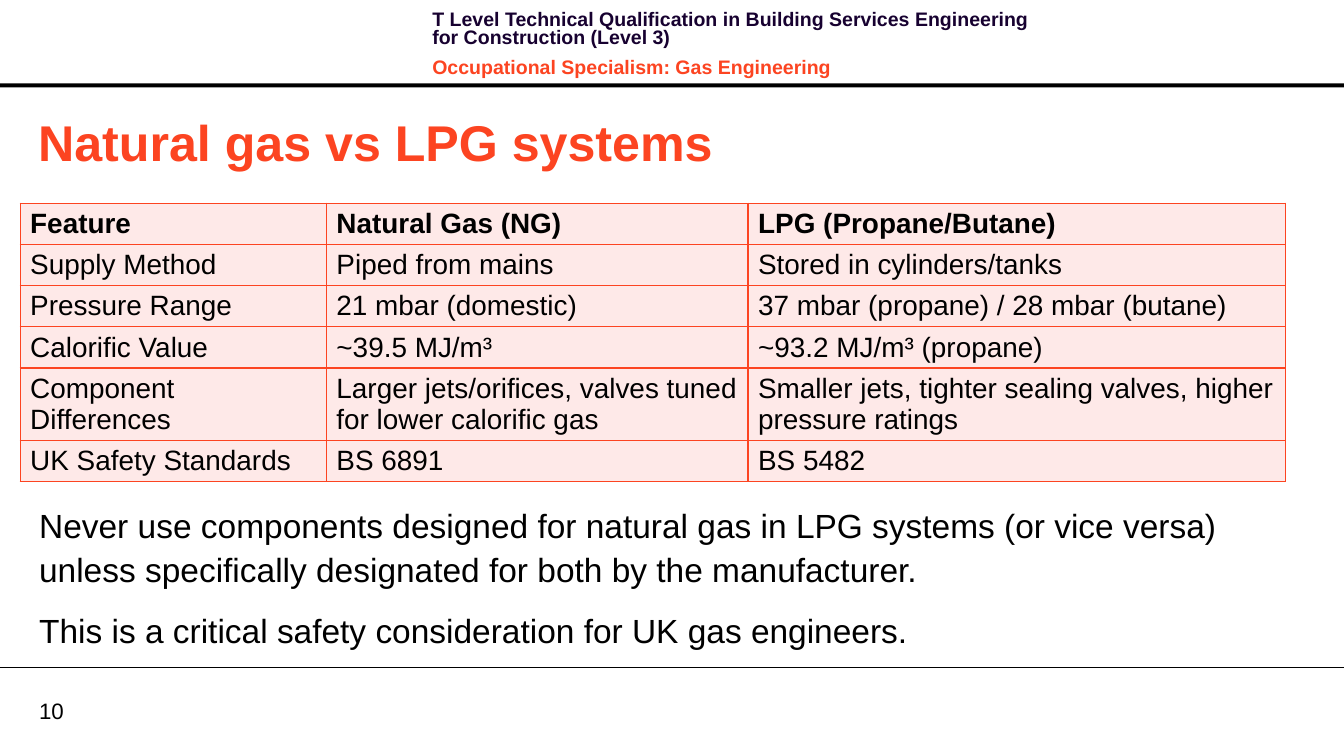
from lxml import etree
from pptx import Presentation
from pptx.dml.color import RGBColor
from pptx.enum.shapes import MSO_CONNECTOR, MSO_SHAPE
from pptx.enum.text import MSO_ANCHOR, MSO_AUTO_SIZE, PP_ALIGN
from pptx.oxml.ns import qn
from pptx.util import Cm, Pt

MIDDLE, TOP = MSO_ANCHOR.MIDDLE, MSO_ANCHOR.TOP
LEFT = PP_ALIGN.LEFT
NO_AUTOSIZE = MSO_AUTO_SIZE.NONE
RECTANGLE = MSO_SHAPE.RECTANGLE
STRAIGHT = MSO_CONNECTOR.STRAIGHT

COLOURS = {"black": "000000", "navy": "170130", "orange": "FC4421", "blush": "FEE9E8"}

TITLE = "Natural gas vs LPG systems"
HEADER = [
    ("T Level Technical Qualification in Building Services Engineering for Construction (Level 3)", "navy"),
    ("Occupational Specialism: Gas Engineering", "orange"),
]
COMPARISON = [
    ("Feature", "Natural Gas (NG)", "LPG (Propane/Butane)"),
    ("Supply Method", "Piped from mains", "Stored in cylinders/tanks"),
    ("Pressure Range", "21 mbar (domestic)", "37 mbar (propane) / 28 mbar (butane)"),
    ("Calorific Value", "~39.5 MJ/m³", "~93.2 MJ/m³ (propane)"),
    ("Component Differences", "Larger jets/orifices, valves tuned for lower calorific gas",
     "Smaller jets, tighter sealing valves, higher pressure ratings"),
    ("UK Safety Standards", "BS 6891", "BS 5482"),
]
WARNINGS = [
    "Never use components designed for natural gas in LPG systems (or vice versa) "
    "unless specifically designated for both by the manufacturer.",
    "This is a critical safety consideration for UK gas engineers.",
]
PAGE_NUMBER = "10"

PAGE_WIDTH, PAGE_HEIGHT = Cm(34.01), Cm(19)
COLUMN_WIDTHS = [Cm(7.75), Cm(10.67), Cm(13.59)]
ROW_HEIGHT, TALL_ROW_HEIGHT = Cm(1.04), Cm(1.83)
TALL_ROW = 4


def colour(name):
    return RGBColor.from_string(COLOURS[name])


def apply(target, values):
    for name, value in values.items():
        setattr(target, name, value)


def place(shape, left, top, width, height):
    apply(shape, {"left": Cm(left), "top": Cm(top), "width": Cm(width), "height": Cm(height)})


def write(frame, lines, size, bold=False, anchor=TOP, inset=None, spacing=None):
    apply(frame, {"word_wrap": True, "auto_size": NO_AUTOSIZE, "vertical_anchor": anchor})
    if inset is not None:
        apply(frame, {f"margin_{side}": inset for side in ("left", "top", "right", "bottom")})
    for index, (text, ink) in enumerate(lines):
        para = frame.paragraphs[0] if index == 0 else frame.add_paragraph()
        format_line(para, text, ink, size, bold)
        apply(para, spacing or {})
        if index == 0:
            para.space_before = Pt(0)


def format_line(para, text, ink, size, bold):
    para.alignment = LEFT
    span = para.add_run()
    span.text = text
    apply(span.font, {"name": "Arial", "size": Pt(size), "bold": bold})
    span.font.color.rgb = colour(ink)


def remove_bullet(para):
    properties = para._p.get_or_add_pPr()
    properties.set("marL", "0")
    properties.set("indent", "0")
    etree.SubElement(properties, qn("a:buNone"))


def add_borders(cell):
    properties = cell._tc.get_or_add_tcPr()
    for position, side in enumerate(("lnL", "lnR", "lnT", "lnB")):
        border = etree.Element(qn(f"a:{side}"), w=str(Pt(1)))
        fill = etree.SubElement(border, qn("a:solidFill"))
        etree.SubElement(fill, qn("a:srgbClr"), val=COLOURS["orange"])
        properties.insert(position, border)


def add_rules(page):
    bar = page.shapes.add_shape(RECTANGLE, 0, Cm(2.11), PAGE_WIDTH, Cm(0.1))
    bar.shadow.inherit = False
    bar.fill.solid()
    bar.fill.fore_color.rgb = colour("black")
    bar.line.fill.background()
    rule = page.shapes.add_connector(STRAIGHT, 0, Cm(16.89), PAGE_WIDTH, Cm(16.89))
    rule.line.width = Pt(0.75)
    rule.line.color.rgb = colour("black")
    etree.SubElement(rule._element.spPr, qn("a:effectLst"))


def add_comparison(page):
    heights = [TALL_ROW_HEIGHT if index == TALL_ROW else ROW_HEIGHT for index in range(len(COMPARISON))]
    table = page.shapes.add_table(len(heights), len(COLUMN_WIDTHS), Cm(0.51), Cm(5.14),
                                  sum(COLUMN_WIDTHS), sum(heights)).table
    for column, width in zip(table.columns, COLUMN_WIDTHS):
        column.width = width
    for index, (row, values) in enumerate(zip(table.rows, COMPARISON)):
        row.height = heights[index]
        for cell, value in zip(row.cells, values):
            cell.vertical_anchor = MIDDLE
            cell.fill.solid()
            cell.fill.fore_color.rgb = colour("blush")
            add_borders(cell)
            format_line(cell.text_frame.paragraphs[0], value, "black", 20, index == 0)


def main():
    deck = Presentation()
    apply(deck, {"slide_width": PAGE_WIDTH, "slide_height": PAGE_HEIGHT})
    page = deck.slides.add_slide(deck.slide_layouts[1])
    add_rules(page)

    header = page.shapes.add_textbox(0, 0, 0, 0)
    place(header, 10.69, 0.18, 16.18, 1.63)
    write(header.text_frame, HEADER, 14, bold=True,
          spacing={"line_spacing": Pt(13.1), "space_before": Pt(4), "space_after": Pt(4)})

    number = page.shapes.add_textbox(0, 0, 0, 0)
    place(number, 0.99, 17.63, 1.63, 0.69)
    write(number.text_frame, [(PAGE_NUMBER, "black")], 16, anchor=MIDDLE, inset=0)

    title, body = page.placeholders
    place(title, 0.71, 2.69, 32.31, 1.8)
    write(title.text_frame, [(TITLE, "orange")], 36, bold=True, anchor=MIDDLE)

    place(body, 0.99, 12.67, 31.5, 3.84)
    write(body.text_frame, [(text, "black") for text in WARNINGS], 24, inset=0,
          spacing={"line_spacing": 1.1, "space_before": Pt(0), "space_after": Pt(12)})
    for para in body.text_frame.paragraphs:
        remove_bullet(para)

    add_comparison(page)
    deck.save("out.pptx")


if __name__ == "__main__":
    main()
